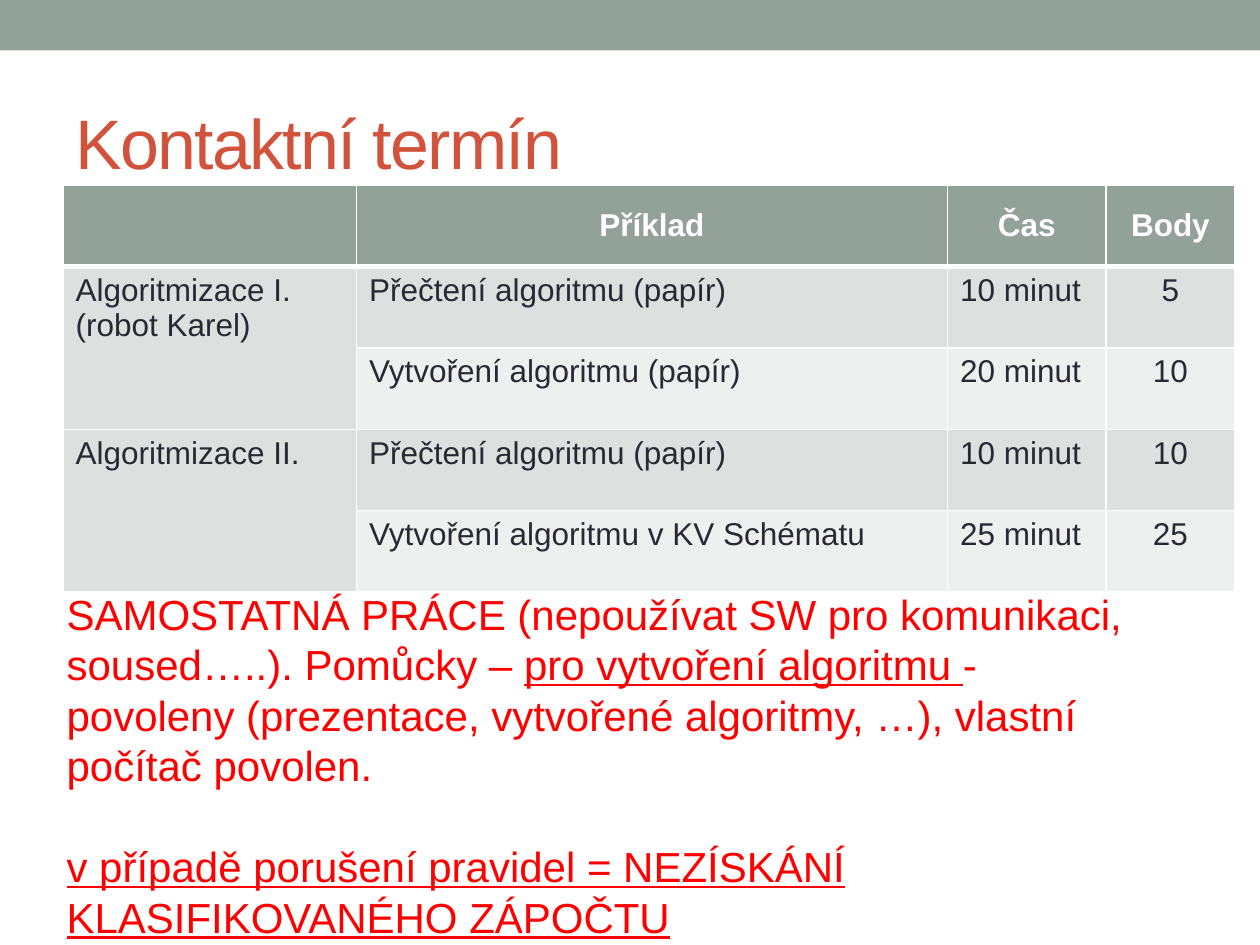
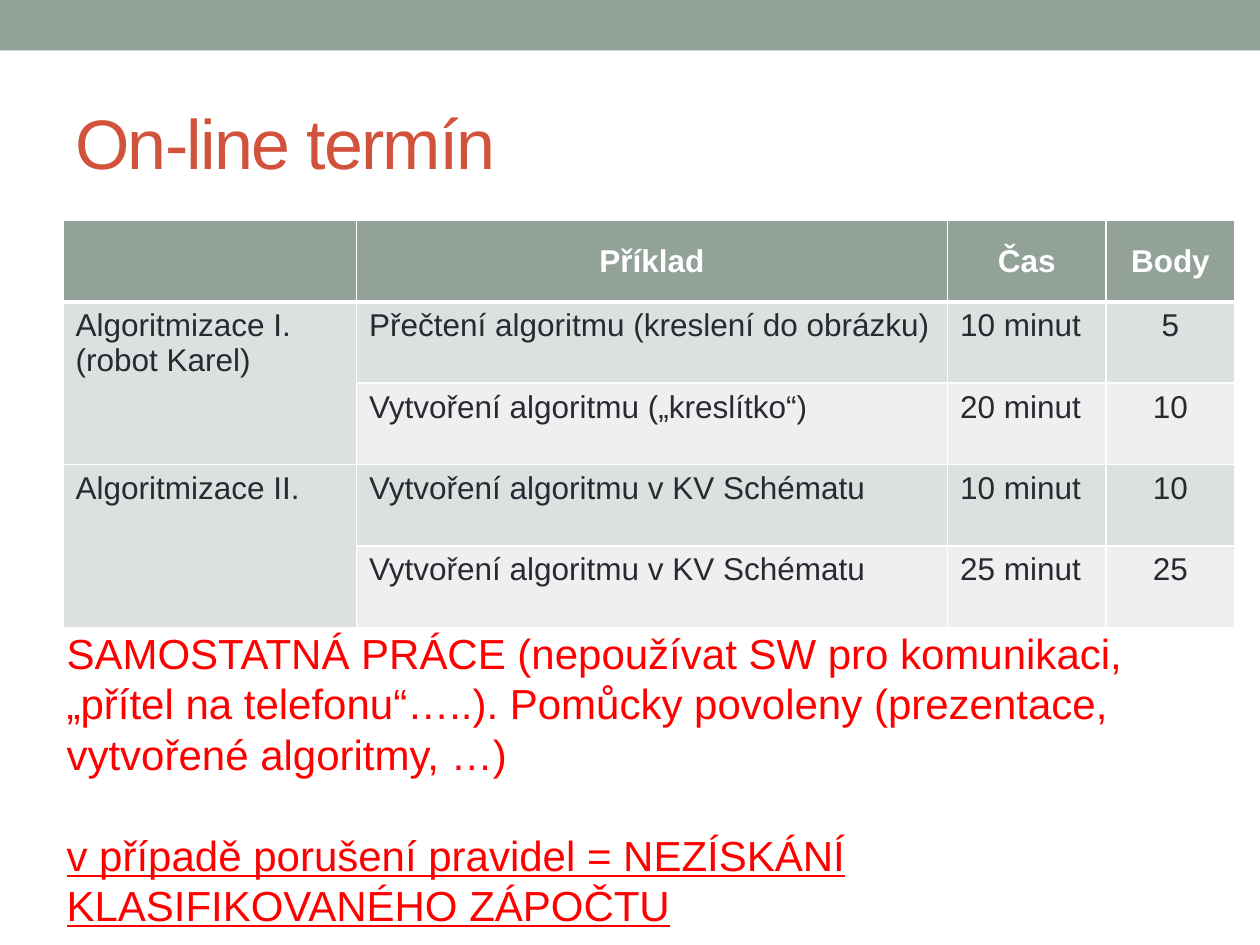
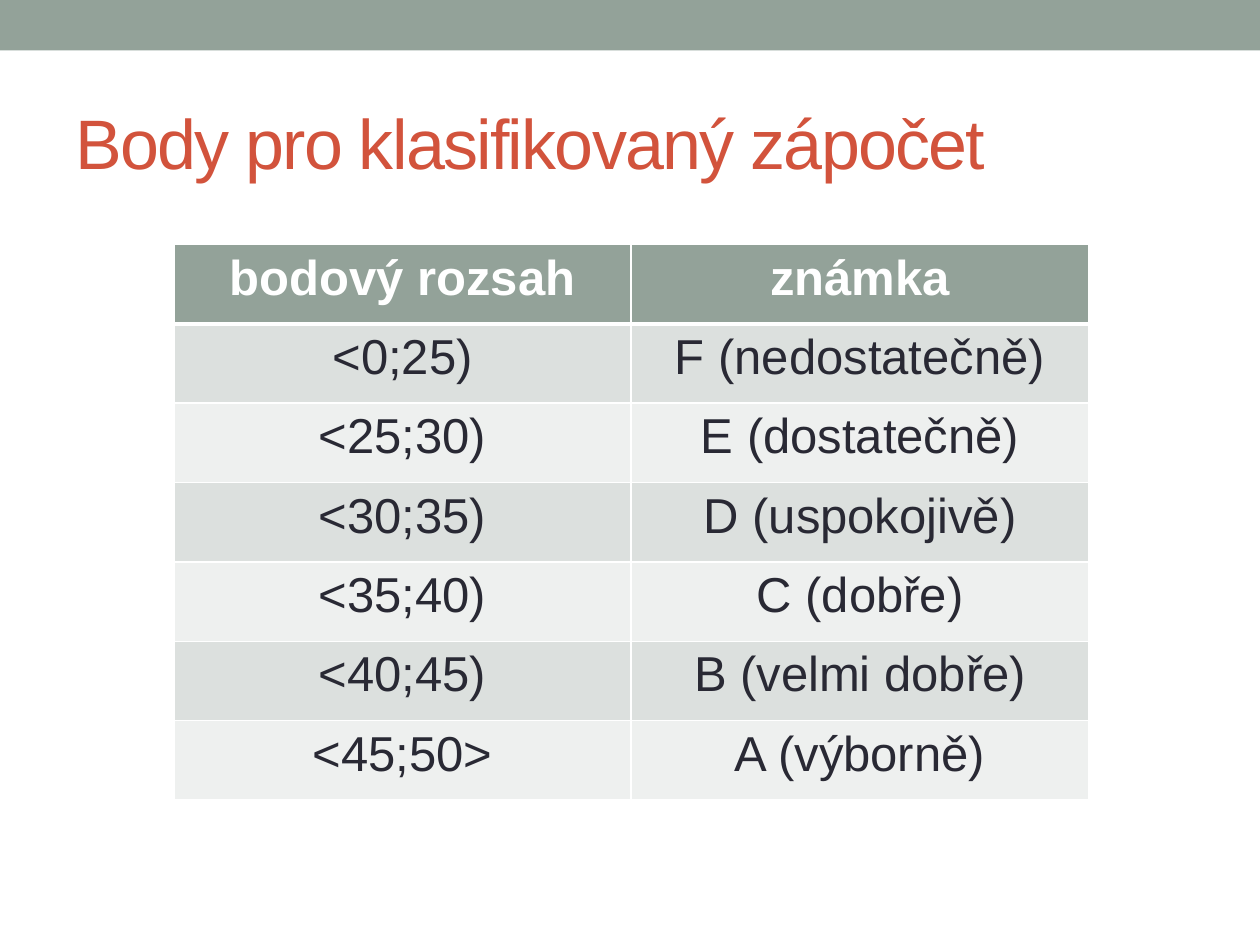
from lxml import etree
from pptx import Presentation, util as u
from pptx.dml.color import RGBColor
from pptx.enum import shapes, text
from pptx.oxml.ns import qn

# Content
HEADER = ["", "Příklad", "Čas", "Body"]
TOPICS = ["Algoritmizace I. (robot Karel)", "Algoritmizace II."]
WARNING = [("v případě porušení pravidel = NEZÍSKÁNÍ KLASIFIKOVANÉHO ZÁPOČTU", True)]

# Each rule is a list of (wording, underlined) pieces
TERMS = [
    {
        "title": "Kontaktní termín",
        "table_top": 1.47,
        "tasks": [
            ("Přečtení algoritmu (papír)", "10 minut", "5"),
            ("Vytvoření algoritmu (papír)", "20 minut", "10"),
            ("Přečtení algoritmu (papír)", "10 minut", "10"),
            ("Vytvoření algoritmu v KV Schématu", "25 minut", "25"),
        ],
        "rules_top": 4.62,
        "rules_height": 2.93,
        "rules": [
            ("SAMOSTATNÁ PRÁCE (nepoužívat SW pro komunikaci, soused…..). Pomůcky – ", False),
            ("pro vytvoření algoritmu ", True),
            ("- povoleny (prezentace, vytvořené algoritmy, …), vlastní počítač povolen.", False),
        ],
    },
    {
        "title": "On-line termín",
        "table_top": 1.75,
        "tasks": [
            ("Přečtení algoritmu (kreslení do obrázku)", "10 minut", "5"),
            ("Vytvoření algoritmu („kreslítko“)", "20 minut", "10"),
            ("Vytvoření algoritmu v KV Schématu", "10 minut", "10"),
            ("Vytvoření algoritmu v KV Schématu", "25 minut", "25"),
        ],
        "rules_top": 4.93,
        "rules_height": 2.52,
        "rules": [
            ("SAMOSTATNÁ PRÁCE (nepoužívat SW pro komunikaci, „přítel na telefonu“…..). "
             "Pomůcky povoleny (prezentace, vytvořené algoritmy, …)", False),
        ],
    },
]

GRADES_TITLE = "Body pro klasifikovaný zápočet"
GRADES = [
    ("bodový rozsah", "známka"),
    ("<0;25)", "F (nedostatečně)"),
    ("<25;30)", "E (dostatečně)"),
    ("<30;35)", "D (uspokojivě)"),
    ("<35;40)", "C (dobře)"),
    ("<40;45)", "B (velmi dobře)"),
    ("<45;50>", "A (výborně)"),
]

# Shared style
COLORS = {"band": "93A299", "title": "D2533C", "ink": "292934", "white": "FFFFFF",
          "dark_row": "DCE0DE", "light_row": "EEF0EF", "rules": "FF0000"}
FONT = "Arial"
TERM_COLUMNS = [2.33, 4.69, 1.26, 1.02]
GRADE_COLUMNS = [3.63, 3.63]

deck = Presentation()
deck.slide_width, deck.slide_height = u.Inches(10), u.Inches(7.5)


def rgb(name):
    return RGBColor.from_string(COLORS[name])


def style(run, size, color, bold=False, underline=False):
    font = run.font
    font.name, font.size, font.bold, font.underline = FONT, u.Pt(size), bold, underline
    font.color.rgb = rgb(color)


def add_frame(slide, left, top, width, height):
    frame = slide.shapes.add_textbox(*map(u.Inches, (left, top, width, height))).text_frame
    frame.word_wrap = True
    return frame


def start_slide(title):
    slide = deck.slides.add_slide(deck.slide_layouts[6])
    band = slide.shapes.add_shape(shapes.MSO_SHAPE.RECTANGLE, 0, 0, deck.slide_width, u.Inches(0.4))
    band.shadow.inherit = False
    band.fill.solid()
    band.fill.fore_color.rgb = rgb("band")
    band.line.fill.background()

    heading = add_frame(slide, 0.5, 0.58, 9, 1.08)
    heading.vertical_anchor = text.MSO_ANCHOR.MIDDLE
    heading.text = title
    run = heading.paragraphs[0].runs[0]
    style(run, 40, "title")
    run._r.get_or_add_rPr().set("spc", "-100")
    return slide


def add_borders(cell, row):
    """White rules, with a heavier one below the header row."""
    heavy_side = {0: "lnB", 1: "lnT"}.get(row)
    properties = cell._tc.get_or_add_tcPr()
    for side in ("lnL", "lnR", "lnT", "lnB"):
        width = u.Pt(3 if side == heavy_side else 1)
        line = etree.SubElement(properties, qn("a:" + side), w=str(int(width)))
        fill = etree.SubElement(line, qn("a:solidFill"))
        etree.SubElement(fill, qn("a:srgbClr"), val=COLORS["white"])


def add_grid(slide, rows, columns, left, top, height, size, centered, header_anchor):
    grid = slide.shapes.add_table(len(rows), len(columns), *map(
        u.Inches, (left, top, sum(columns), height))).table
    for column, width in zip(grid.columns, columns):
        column.width = u.Inches(width)
    for r, row in enumerate(rows):
        header = r == 0
        row_fill = "band" if header else "dark_row" if r % 2 else "light_row"
        for c, wording in enumerate(row):
            cell = grid.cell(r, c)
            add_borders(cell, r)
            cell.fill.solid()
            cell.fill.fore_color.rgb = rgb(row_fill)
            cell.vertical_anchor = header_anchor if header else text.MSO_ANCHOR.TOP
            cell.text = wording
            paragraph = cell.text_frame.paragraphs[0]
            if header or c in centered:
                paragraph.alignment = text.PP_ALIGN.CENTER
            for run in paragraph.runs:
                style(run, size, "white" if header else "ink", bold=header)
    return grid


def add_rules(slide, term):
    frame = add_frame(slide, 0.43, term["rules_top"], 8.82, term["rules_height"])
    for i, pieces in enumerate((term["rules"], WARNING)):
        paragraph = frame.add_paragraph() if i else frame.paragraphs[0]
        paragraph.space_before = u.Pt(29 * i)
        for wording, underlined in pieces:
            run = paragraph.add_run()
            run.text = wording
            style(run, 24, "rules", underline=underlined)


# Exam terms: each topic spans two tasks
for term in TERMS:
    slide = start_slide(term["title"])
    rows = [HEADER] + [("" if i % 2 else TOPICS[i // 2], *task)
                       for i, task in enumerate(term["tasks"])]
    schedule = add_grid(slide, rows, TERM_COLUMNS, 0.5, term["table_top"], 3.23, 18,
                        centered={3}, header_anchor=text.MSO_ANCHOR.MIDDLE)
    for first in range(1, len(rows), 2):
        schedule.cell(first, 0).merge(schedule.cell(first + 1, 0))
    add_rules(slide, term)

# Grading scale
add_grid(start_slide(GRADES_TITLE), GRADES, GRADE_COLUMNS, 1.38, 1.94, 4.41, 28,
         centered={0, 1}, header_anchor=text.MSO_ANCHOR.TOP)

deck.save("out.pptx")
